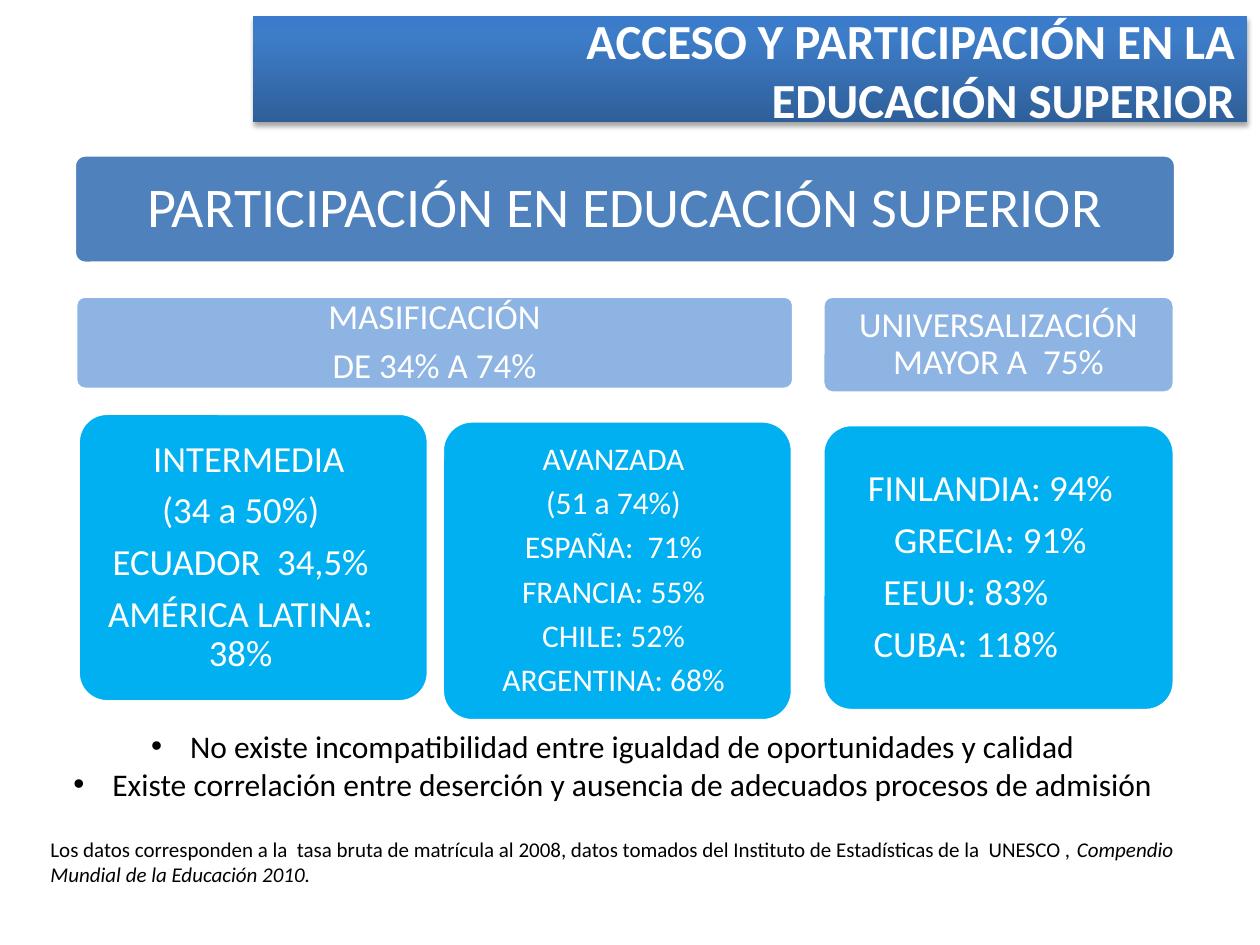
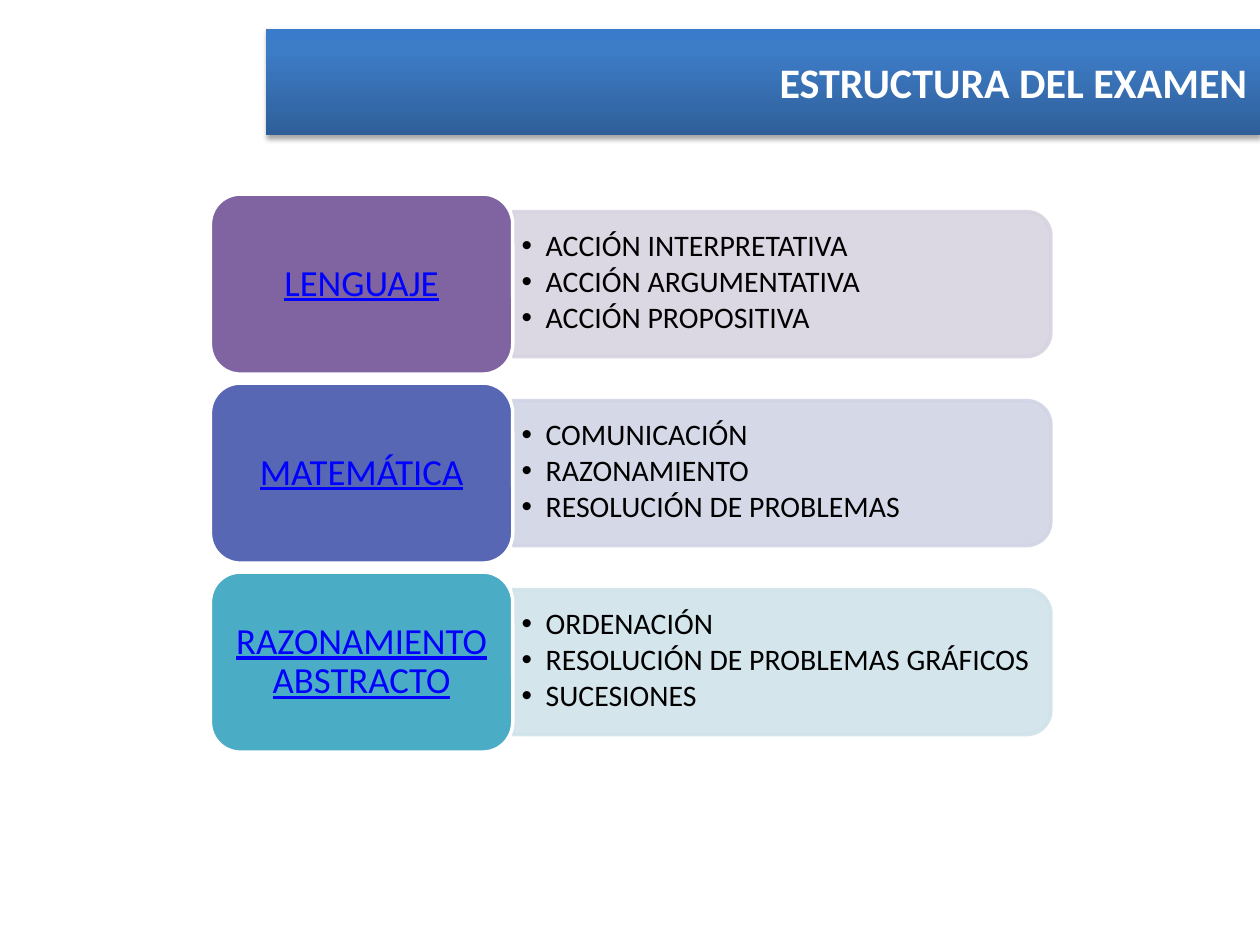
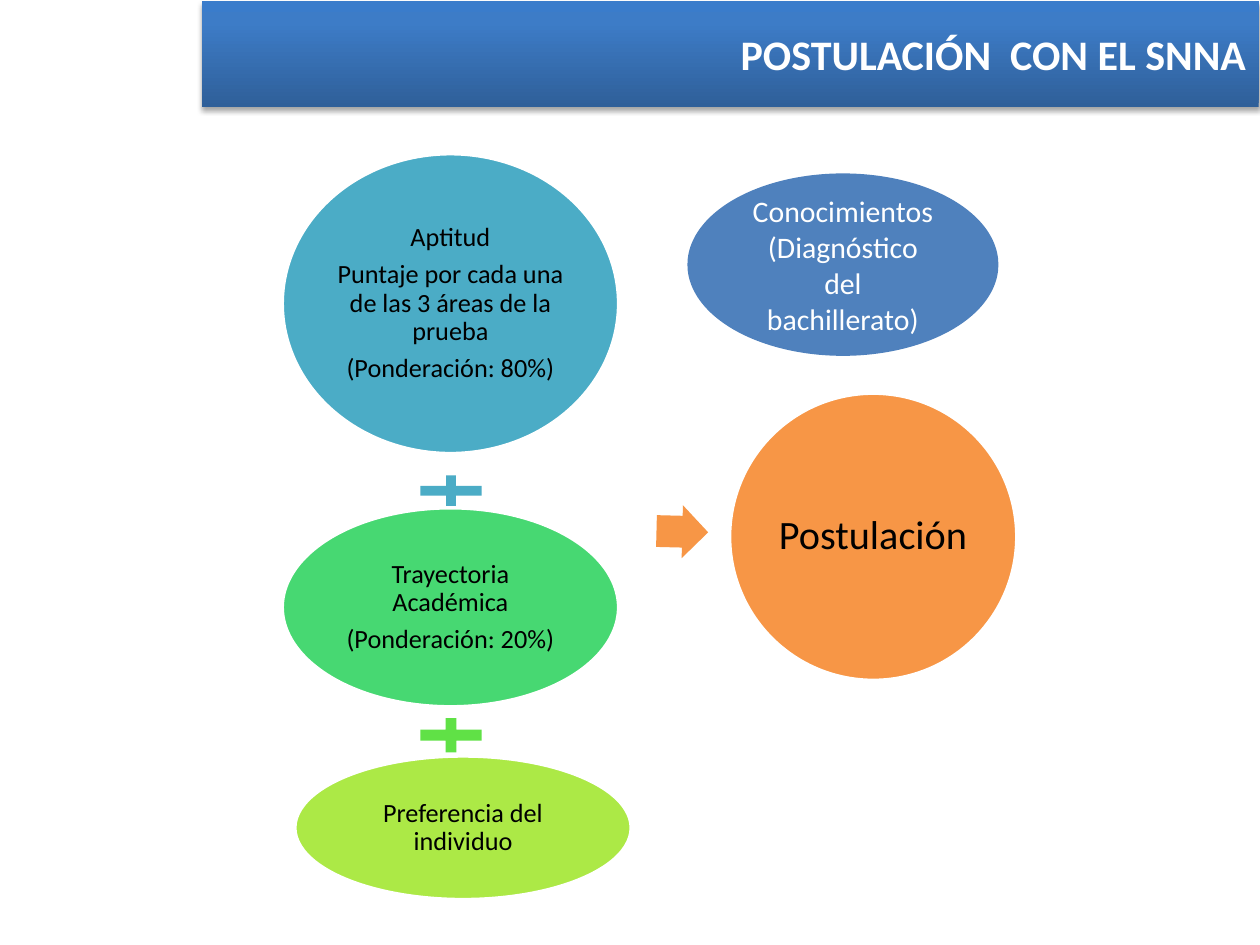
from pptx import Presentation
from pptx.dml.color import RGBColor
from pptx.enum.shapes import MSO_SHAPE
from pptx.enum.text import MSO_ANCHOR, MSO_AUTO_SIZE, PP_ALIGN
from pptx.oxml import parse_xml
from pptx.oxml.ns import nsdecls, qn
from pptx.util import Inches, Pt
from lxml.etree import SubElement

FONT = "Calibri"
WHITE, BLACK, LINK = "FFFFFF", "000000", "0000FF"
BLUE, PALE, SKY = "4F81BD", "8EB4E3", "00B0F0"
TEAL, ORANGE = "4BACC6", "F79646"
GRAD = [(0, "2F5F99"), (80, "3D7CC7"), (100, "3A7CCB")]


def tint(code):
    return RGBColor.from_string(code)


def write(para, text, size=18, color=BLACK, bold=False, slant=False, under=False):
    run = para.add_run()
    run.text = text
    font = run.font
    font.name, font.size = FONT, Pt(size)
    font.bold, font.italic, font.underline = bold, slant, under
    font.color.rgb = tint(color)


def setup(frame, inset=(0.1, 0.05), anchor=MSO_ANCHOR.MIDDLE):
    frame.word_wrap = True
    frame.auto_size = MSO_AUTO_SIZE.NONE
    frame.vertical_anchor = anchor
    frame.margin_left = frame.margin_right = Inches(inset[0])
    frame.margin_top = frame.margin_bottom = Inches(inset[1])


def mark(para, indent):
    props = para._p.get_or_add_pPr()
    props.set("marL", str(Inches(indent)))
    props.set("indent", str(-Inches(indent)))
    if indent:
        SubElement(props, qn("a:buFont")).set("typeface", "Arial")
        SubElement(props, qn("a:buChar")).set("char", "•")
    else:
        SubElement(props, qn("a:buNone"))


def fill_text(frame, lines, align=PP_ALIGN.CENTER, gap=0, lead=1.0,
              indent=0, pads={}, **style):
    for i, line in enumerate(lines):
        para = frame.add_paragraph() if i else frame.paragraphs[0]
        mark(para, indent)
        if i in pads:
            para._p.pPr.set("marR", str(Inches(pads[i])))
        para.alignment, para.line_spacing = align, lead
        para.space_before = Pt(0)
        para.space_after = Pt(round(gap * style["size"], 1))
        write(para, line, **style)


def place(item, left, top, width, height):
    item.left, item.top = Inches(left), Inches(top)
    item.width, item.height = Inches(width), Inches(height)


def title(slide, lines, left, top, width, size=24):
    band = slide.shapes.title
    place(band, left, top, width, 0.84)
    stops = "".join(f'<a:gs pos="{at * 1000}"><a:srgbClr val="{code}"/></a:gs>'
                    for at, code in GRAD)
    props = band._element.spPr
    props.append(parse_xml(
        f'<a:gradFill {nsdecls("a")} rotWithShape="1"><a:gsLst>{stops}</a:gsLst>'
        '<a:lin ang="16200000" scaled="0"/></a:gradFill>'))
    props.append(parse_xml(
        f'<a:effectLst {nsdecls("a")}><a:outerShdw blurRad="{Pt(3.1)}" '
        f'dist="{Pt(1.8)}" dir="5400000" rotWithShape="0"><a:srgbClr val="{BLACK}">'
        '<a:alpha val="35000"/></a:srgbClr></a:outerShdw></a:effectLst>'))
    setup(band.text_frame)
    fill_text(band.text_frame, lines, PP_ALIGN.RIGHT, size=size, color=WHITE, bold=True)


def draw(slide, kind, box, color, edge=WHITE, turn=0, adjust=(), alpha=None):
    shape = slide.shapes.add_shape(kind, *map(Inches, box))
    shape.shadow.inherit = False
    shape.rotation = turn
    for i, value in enumerate(adjust):
        shape.adjustments[i] = value
    shape.fill.solid()
    shape.fill.fore_color.rgb = tint(color)
    if edge:
        shape.line.color.rgb = tint(edge)
        shape.line.width = Pt(2)
    else:
        shape.line.fill.background()
    if alpha:
        for node in shape._element.spPr.iter(qn("a:srgbClr")):
            SubElement(node, qn("a:alpha")).set("val", str(alpha * 1000))
    return shape


def card(slide, box, color, lines, size, inset, pads={}):
    shape = draw(slide, MSO_SHAPE.ROUNDED_RECTANGLE, box, color, adjust=[0.1])
    setup(shape.text_frame, (inset, inset))
    fill_text(shape.text_frame, lines, gap=0.33, lead=0.9, pads=pads,
              size=size, color=WHITE)


def disc(slide, box, color, lines, size=15):
    shape = draw(slide, MSO_SHAPE.OVAL, box, color)
    setup(shape.text_frame, (0.02, 0.02))
    fill_text(shape.text_frame, lines, gap=0.33, lead=0.9, size=size)


def access(deck):
    slide = deck.slides.add_slide(deck.slide_layouts[1])
    title(slide, ["ACCESO Y PARTICIPACIÓN EN LA", "EDUCACIÓN SUPERIOR"],
          2.01, 0.13, 7.89, 28)
    card(slide, (0.59, 1.23, 8.74, 0.86), BLUE,
         ["PARTICIPACIÓN EN EDUCACIÓN SUPERIOR"], 32, 0.13)
    card(slide, (0.6, 2.35, 5.7, 0.74), PALE, ["MASIFICACIÓN", "DE 34% A 74%"], 20, 0.08)
    card(slide, (6.53, 2.35, 2.79, 0.77), PALE,
         ["UNIVERSALIZACIÓN MAYOR A  75%"], 20, 0.08)
    card(slide, (0.62, 3.28, 2.78, 2.29), SKY,
         ["INTERMEDIA", "(34 a 50%)", "ECUADOR  34,5%", "AMÉRICA LATINA: 38%"],
         21, 0.09, {0: 0.07, 1: 0.2})
    card(slide, (3.51, 3.34, 2.78, 2.38), SKY,
         ["AVANZADA", "(51 a 74%)", "ESPAÑA:  71%", "FRANCIA: 55%",
          "CHILE: 52%", "ARGENTINA: 68%"], 18, 0.07, {0: 0.06, 1: 0.06})
    card(slide, (6.53, 3.37, 2.79, 2.27), SKY,
         ["FINLANDIA: 94%", "GRECIA: 91%", "EEUU: 83%", "CUBA: 118%"],
         21, 0.09, {0: 0.13, 1: 0.13, 2: 0.52})

    notes = slide.placeholders[1]
    place(notes, 0.3, 5.72, 9.13, 1.38)
    frame = notes.text_frame
    setup(frame, anchor=MSO_ANCHOR.TOP)
    fill_text(frame, [
        "No existe incompatibilidad entre igualdad de oportunidades y calidad",
        "Existe correlación entre deserción y ausencia de adecuados procesos de admisión",
    ], indent=0.31, size=18)
    source = frame.add_paragraph()
    mark(source, 0)
    source.alignment, source.space_before = PP_ALIGN.LEFT, Pt(19.5)
    write(source, "Los datos corresponden a la  tasa bruta de matrícula al 2008, datos "
          "tomados del Instituto de Estadísticas de la  UNESCO , ", size=12)
    write(source, "Compendio Mundial de la Educación 2010.", size=12, slant=True)


def exam(deck):
    slide = deck.slides.add_slide(deck.slide_layouts[4])
    title(slide, ["ESTRUCTURA DEL EXAMEN"], 2.11, 0.23, 7.89)
    areas = [
        ("LENGUAJE", "8064A2", "D8D3E0",
         ["ACCIÓN INTERPRETATIVA", "ACCIÓN ARGUMENTATIVA", "ACCIÓN PROPOSITIVA"]),
        ("MATEMÁTICA", "5767B4", "D1D4E5",
         ["COMUNICACIÓN", "RAZONAMIENTO", "RESOLUCIÓN DE PROBLEMAS"]),
        ("RAZONAMIENTO ABSTRACTO", TEAL, "D0E3EA",
         ["ORDENACIÓN", "RESOLUCIÓN DE PROBLEMAS GRÁFICOS", "SUCESIONES"]),
    ]
    lists = list(slide.placeholders)[1:]
    for i, (name, dark, light, skills) in enumerate(areas):
        drop = 1.5 * i
        draw(slide, MSO_SHAPE.ROUND_2_SAME_RECTANGLE, (5.63, 0.12 + drop, 1.15, 4.27),
             light, light, turn=90, alpha=90)
        body = lists[i]
        place(body, 4.07, 1.73 + drop, 4.21, 1.03)
        setup(body.text_frame, (0.07, 0.04))
        fill_text(body.text_frame, skills, PP_ALIGN.LEFT, gap=0.14, lead=0.9,
                  indent=0.19, size=17)
        slide.shapes._spTree.append(body._element)
        label = draw(slide, MSO_SHAPE.ROUNDED_RECTANGLE,
                     (1.67, 1.54 + drop, 2.4, 1.43), dark)
        setup(label.text_frame, (0.09, 0.04))
        fill_text(label.text_frame, [name], gap=0.33, lead=0.9,
                  size=21, color=LINK, under=True)
    spare = lists[-1]._element
    spare.getparent().remove(spare)


def apply(deck):
    slide = deck.slides.add_slide(deck.slide_layouts[5])
    title(slide, ["POSTULACIÓN  CON EL SNNA"], 1.6, 0.01, 8.39)
    disc(slide, (2.24, 1.22, 2.67, 2.38), TEAL,
         ["Aptitud", "Puntaje por cada una de las 3 áreas de la prueba",
          "(Ponderación: 80%)"])
    disc(slide, (2.24, 4.03, 2.67, 1.58), "47D872",
         ["Trayectoria Académica", "(Ponderación: 20%)"])
    disc(slide, (2.34, 6, 2.67, 1.14), "ACE946", ["Preferencia del individuo"])
    disc(slide, (5.79, 3.12, 2.28, 2.28), ORANGE, ["Postulación"], 23)
    for top, height, color in [(3.73, 0.33, TEAL), (5.65, 0.37, "60E146")]:
        draw(slide, MSO_SHAPE.MATH_PLUS, (3.25, top, 0.66, height), color, None)
    draw(slide, MSO_SHAPE.RIGHT_ARROW, (5.21, 4.01, 0.41, 0.42), ORANGE, None,
         turn=1.4, adjust=[0.6, 0.5])
    known = draw(slide, MSO_SHAPE.OVAL, (5.47, 1.39, 2.44, 1.42), BLUE, BLUE)
    setup(known.text_frame)
    fill_text(known.text_frame, ["Conocimientos", "(Diagnóstico del bachillerato)"],
              size=17, color=WHITE)


def main():
    deck = Presentation()
    deck.slide_width, deck.slide_height = Inches(10), Inches(7.5)
    access(deck)
    exam(deck)
    apply(deck)
    deck.save("out.pptx")


if __name__ == "__main__":
    main()
